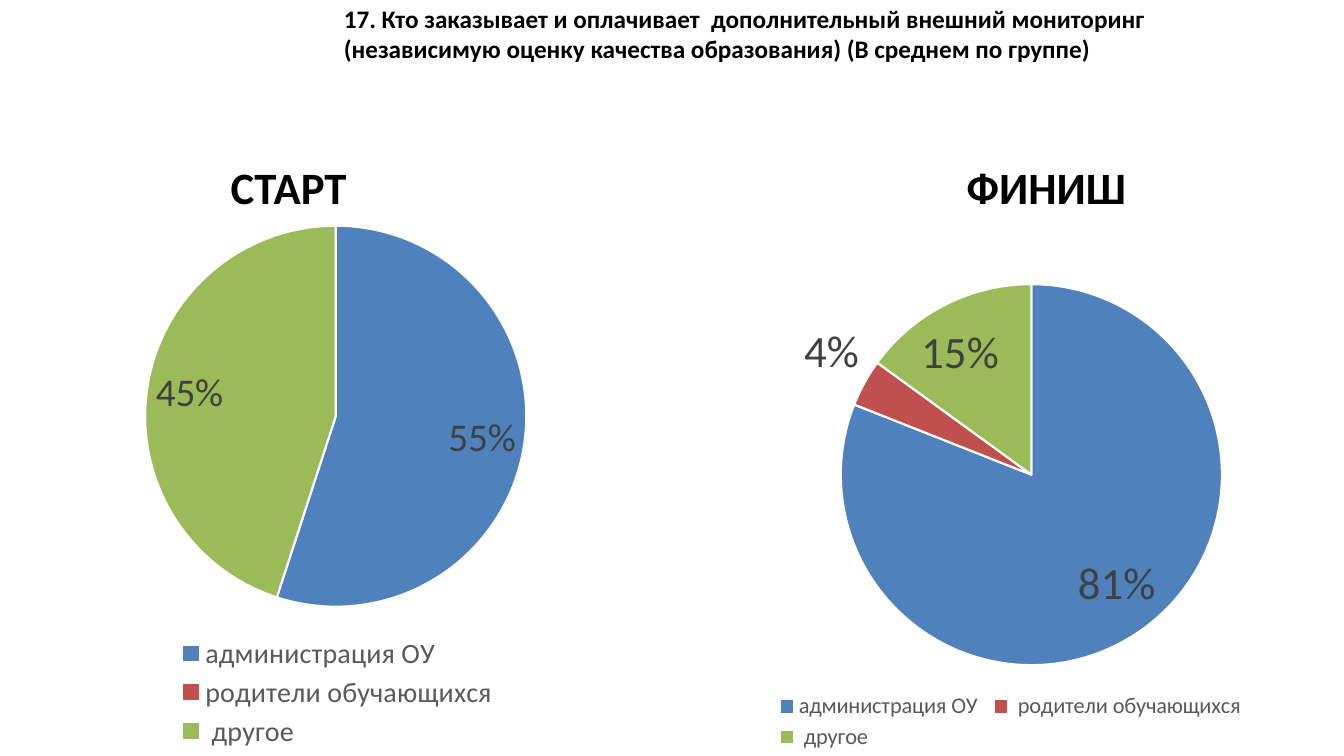
from dataclasses import dataclass

from lxml import etree
from pptx import Presentation
from pptx.chart.data import CategoryChartData
from pptx.dml.color import RGBColor
from pptx.enum import chart as ch, text as tx
from pptx.oxml import ns
from pptx.util import Inches, Pt


@dataclass(frozen=True)
class Theme:
    font: str = "Calibri"
    ink: str = "000000"
    label: str = "404040"
    legend: str = "595959"
    border: str = "FFFFFF"
    slices: tuple = ("4F81BD", "C0504D", "9BBB59")
    title_size: int = 18
    caption_size: int = 32


THEME = Theme()


def style_font(font, size, color, bold=False):
    font.name = THEME.font
    font.size = Pt(size)
    font.bold = bold
    font.color.rgb = RGBColor.from_string(color)


def fill_text(box, wording, size):
    frame = box.text_frame
    frame.text = wording
    frame.word_wrap = True
    frame.auto_size = tx.MSO_AUTO_SIZE.NONE
    frame.vertical_anchor = tx.MSO_ANCHOR.TOP
    paragraph = frame.paragraphs[0]
    paragraph.alignment = tx.PP_ALIGN.LEFT
    style_font(paragraph.font, size, THEME.ink, bold=True)


def add_title(slide, wording):
    title = slide.shapes.title
    title.left, title.top = Inches(3.31), Inches(-0.02)
    title.width, title.height = Inches(8.83), Inches(1.3)
    fill_text(title, wording, THEME.title_size)


def add_caption(slide, wording, left, width):
    caption = slide.shapes.add_textbox(
        Inches(left), Inches(1.54), Inches(width), Inches(0.63))
    fill_text(caption, wording, THEME.caption_size)


def place_part(part, area, frame, inner=False):
    """Fix a chart part at a slide area, both given in inches."""
    for old in part.findall(ns.qn("c:layout")):
        part.remove(old)
    layout = etree.Element(ns.qn("c:layout"))
    manual = etree.SubElement(layout, ns.qn("c:manualLayout"))
    left, top, width, height = frame
    settings = [("layoutTarget", "inner")] if inner else []
    settings += [
        ("xMode", "edge"), ("yMode", "edge"),
        ("x", (area[0] - left) / width), ("y", (area[1] - top) / height),
        ("w", area[2] / width), ("h", area[3] / height),
    ]
    for tag, value in settings:
        shown = value if isinstance(value, str) else f"{value:.4f}"
        etree.SubElement(manual, ns.qn(f"c:{tag}")).set("val", shown)
    part.insert(0 if inner else 1, layout)


def hide_label(labels, index):
    label = etree.Element(ns.qn("c:dLbl"))
    etree.SubElement(label, ns.qn("c:idx")).set("val", str(index))
    etree.SubElement(label, ns.qn("c:delete")).set("val", "1")
    labels.insert(0, label)


def add_pie(slide, answers, frame, pie_area, legend_area, label_size, legend_size):
    data = CategoryChartData()
    data.categories = list(answers)
    data.add_series("Series 1", list(answers.values()))
    chart = slide.shapes.add_chart(
        ch.XL_CHART_TYPE.PIE, *map(Inches, frame), data).chart
    chart.has_title = False
    style_font(chart.font, legend_size, THEME.legend)

    chart.has_legend = True
    legend = chart.legend
    legend.position = ch.XL_LEGEND_POSITION.BOTTOM
    legend.include_in_layout = False
    style_font(legend.font, legend_size, THEME.legend)

    plot = chart.plots[0]
    plot.vary_by_categories = True
    shares = plot.series[0]
    for index, color in enumerate(THEME.slices):
        pie_slice = shares.points[index].format
        pie_slice.fill.solid()
        pie_slice.fill.fore_color.rgb = RGBColor.from_string(color)
        pie_slice.line.color.rgb = RGBColor.from_string(THEME.border)
        pie_slice.line.width = Pt(1.5)

    labels = shares.data_labels
    labels.show_percentage = True
    labels.show_value = False
    labels.number_format = "0%"
    labels.number_format_is_linked = False
    labels.position = ch.XL_LABEL_POSITION.BEST_FIT
    style_font(labels.font, label_size, THEME.label)
    for index, share in enumerate(answers.values()):
        if share == 0:
            hide_label(shares._element.find(ns.qn("c:dLbls")), index)

    space = chart._chartSpace
    place_part(space.find(".//" + ns.qn("c:plotArea")), pie_area, frame, inner=True)
    place_part(space.find(".//" + ns.qn("c:legend")), legend_area, frame)


def main():
    deck = Presentation()
    deck.slide_width, deck.slide_height = Inches(13.33), Inches(7.5)
    slide = deck.slides.add_slide(deck.slide_layouts[5])

    add_title(slide, "17. Кто заказывает и оплачивает  дополнительный внешний "
                     "мониторинг (независимую оценку качества образования) "
                     "(В среднем по группе)")
    add_pie(slide,
            {"администрация ОУ": 55, "родители обучающихся": 0, " другое": 45},
            frame=(0, 2.1, 6.67, 5.4), pie_area=(1.44, 2.24, 3.78, 3.78),
            legend_area=(1.72, 6.27, 3.25, 1.2), label_size=28, legend_size=20)
    add_caption(slide, "СТАРТ", 2.19, 1.8)
    add_caption(slide, "ФИНИШ", 9.49, 2.3)
    add_pie(slide,
            {"администрация ОУ": 81, " родители обучающихся": 4, " другое": 15},
            frame=(6.67, 2.18, 6.65, 5.31), pie_area=(8.34, 2.82, 3.78, 3.78),
            legend_area=(7.65, 6.84, 4.75, 0.64), label_size=32, legend_size=16)

    deck.save("out.pptx")


if __name__ == "__main__":
    main()
